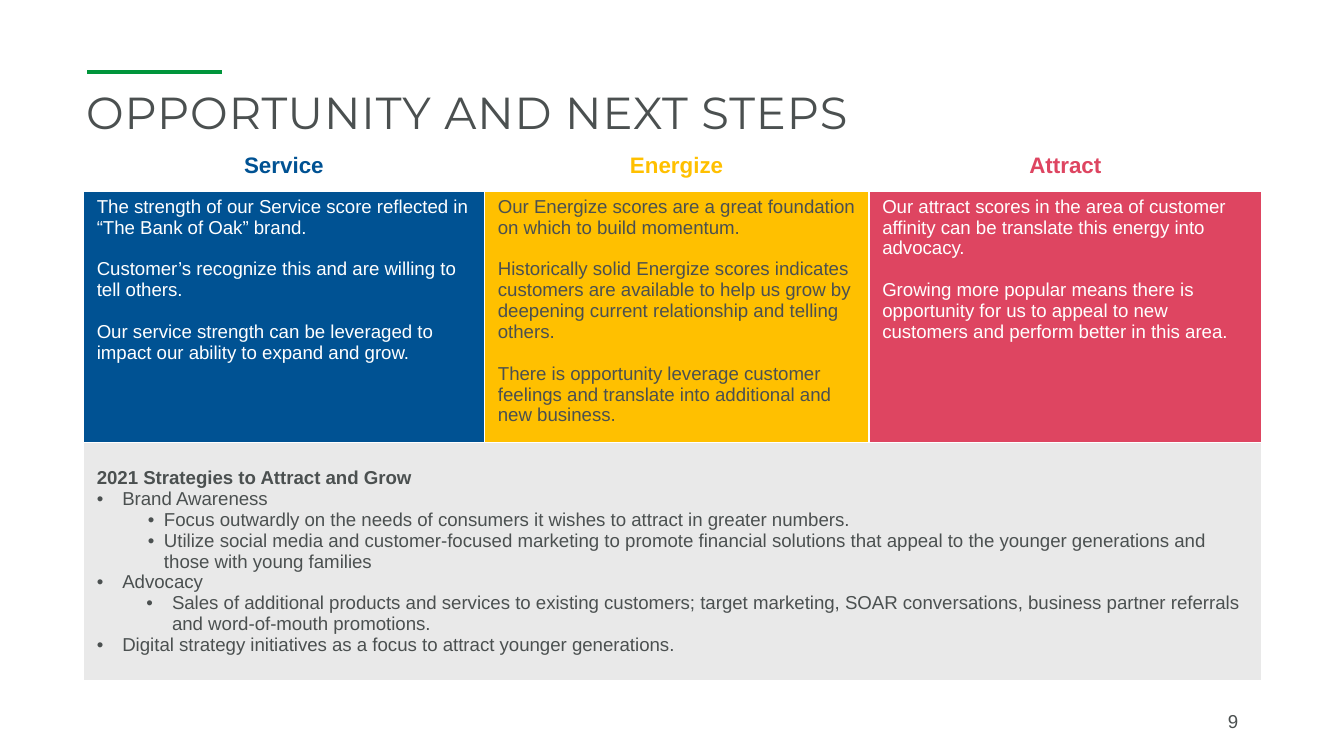
from lxml.etree import SubElement
from pptx import Presentation
from pptx.dml.color import RGBColor as RGB
from pptx.enum.shapes import MSO_CONNECTOR as Connector
from pptx.enum.text import MSO_ANCHOR as Anchor, MSO_AUTO_SIZE as AutoSize, PP_ALIGN as Align
from pptx.oxml import parse_xml
from pptx.oxml.ns import nsdecls, qn
from pptx.util import Inches, Pt

THEME = {
    "ink": "4B5050", "white": "FFFFFF", "green": "00953B", "gray": "E9E9E9",
    "blue": "005293", "gold": "FFC000", "rose": "DE4561",
    "title": 24, "heading": 12, "body": 10, "gap": 11.2,
    "title_font": "Montserrat", "font": "Arial",
}


def style(paragraph, size, color, bold=False, font="font", spacing=0):
    for run in paragraph.runs:
        run.font.name = THEME[font]
        run.font.size = Pt(THEME[size])
        run.font.bold = bold
        run.font.color.rgb = RGB.from_string(THEME[color])
        if spacing:
            run._r.get_or_add_rPr().set("spc", str(spacing))


def paint(cell, color=None, bottom=1):
    props = cell._tc.get_or_add_tcPr()
    for side, points in (("L", 1), ("R", 1), ("T", 1), ("B", bottom)):
        props.append(parse_xml(
            f'<a:ln{side} {nsdecls("a")} w="{Pt(points)}"><a:solidFill>'
            f'<a:srgbClr val="{THEME["white"]}"/></a:solidFill></a:ln{side}>'))
    if color:
        cell.fill.solid()
        cell.fill.fore_color.rgb = RGB.from_string(THEME[color])
    else:
        cell.fill.background()


deck = Presentation()
deck.slide_width = Inches(10)
deck.slide_height = deck.slide_width * 9 // 16
col, row = deck.slide_width / 100, deck.slide_height / 100
slide = deck.slides.add_slide(deck.slide_layouts[5])

accent = slide.shapes.add_connector(
    Connector.STRAIGHT, int(6.5 * col), int(9.55 * row), int(16.5 * col), int(9.55 * row))
accent.line.color.rgb = RGB.from_string(THEME["green"])
accent.line.width = Pt(2.25)
SubElement(accent._element.spPr, qn("a:effectLst"))

title = slide.shapes.title
title.left, title.top = int(6.4 * col), int(11.2 * row)
title.width, title.height = int(87 * col), int(7.5 * row)
heading = title.text_frame
heading.text = "OPPORTUNITY AND NEXT STEPS"
heading.margin_left = heading.margin_right = heading.margin_top = heading.margin_bottom = 0
heading.vertical_anchor = Anchor.TOP
heading.auto_size = AutoSize.NONE
heading.paragraphs[0].alignment = Align.LEFT
style(heading.paragraphs[0], "title", "ink", font="title_font", spacing=50)

PILLARS = [
    ("Service", "blue", "white", 29.85, [
        "The strength of our Service score reflected in “The Bank of Oak” brand.",
        "Customer’s recognize this and are willing to tell others.",
        "Our service strength can be leveraged to impact our ability to expand and grow."]),
    ("Energize", "gold", "ink", 28.6, [
        "Our Energize scores are a great foundation on which to build momentum.",
        "Historically solid Energize scores indicates customers are available to help us "
        "grow by deepening current relationship and telling others.",
        "There is opportunity leverage customer feelings and translate into additional "
        "and new business."]),
    ("Attract", "rose", "white", 29.25, [
        "Our attract scores in the area of customer affinity can be translate this energy "
        "into advocacy.",
        "Growing more popular means there is opportunity for us to appeal to new customers "
        "and perform better in this area."]),
]
ROWS = [5.7, 33.45, 31.5]
STRATEGIES = [
    (0, 0, 0, "2021 Strategies to Attract and Grow"),
    (0, 0.19, 0.19, "Brand Awareness"),
    (1, 0.5, 0.12, "Focus outwardly on the needs of consumers it wishes to attract in "
                   "greater numbers."),
    (1, 0.5, 0.12, "Utilize social media and customer-focused marketing to promote financial "
                   "solutions that appeal to the younger generations and those with young families"),
    (0, 0.19, 0.19, "Advocacy"),
    (1, 0.56, 0.19, "Sales of additional products and services to existing customers; target "
                    "marketing, SOAR conversations, business partner referrals and "
                    "word-of-mouth promotions."),
    (0, 0.19, 0.19, "Digital strategy initiatives as a focus to attract younger generations."),
]

table = slide.shapes.add_table(
    len(ROWS), len(PILLARS), int(6.2 * col), int(19.4 * row),
    int(sum(pillar[3] for pillar in PILLARS) * col), int(sum(ROWS) * row)).table
table.first_row = table.horz_banding = False
for line, height in zip(table.rows, ROWS):
    line.height = int(height * row)

for i, (name, color, text_color, width, points) in enumerate(PILLARS):
    table.columns[i].width = int(width * col)
    label, story, footer = (table.cell(r, i) for r in range(len(ROWS)))
    paint(label, bottom=3)
    paint(story, color)
    paint(footer, "gray")
    label.text_frame.text = name
    label.text_frame.paragraphs[0].alignment = Align.CENTER
    style(label.text_frame.paragraphs[0], "heading", color, bold=True)
    story.text_frame.text = "\n".join(points)
    for n, point in enumerate(story.text_frame.paragraphs):
        if n:
            point.space_before = Pt(THEME["gap"])
        style(point, "body", text_color)

plan = table.cell(2, 0)
plan.merge(table.cell(2, len(PILLARS) - 1))
plan.vertical_anchor = Anchor.MIDDLE
plan.text_frame.text = "\n".join(strategy[3] for strategy in STRATEGIES)
for item, (level, margin, hanging, _) in zip(plan.text_frame.paragraphs, STRATEGIES):
    item.level = level
    if margin:
        props = item._p.get_or_add_pPr()
        props.set("marL", str(Inches(margin)))
        props.set("indent", str(-Inches(hanging)))
        SubElement(props, qn("a:buFont"), typeface=THEME["font"])
        SubElement(props, qn("a:buChar"), char="•")
    style(item, "body", "ink", bold=not margin)

page = slide.shapes.add_textbox(
    int(89.2 * col), int(92.7 * row), int(3.9 * col), int(5.3 * row)).text_frame
page.word_wrap = True
page.vertical_anchor = Anchor.MIDDLE
page.text = "9"
page.paragraphs[0].alignment = Align.RIGHT
style(page.paragraphs[0], "body", "ink", spacing=30)

deck.save("out.pptx")
